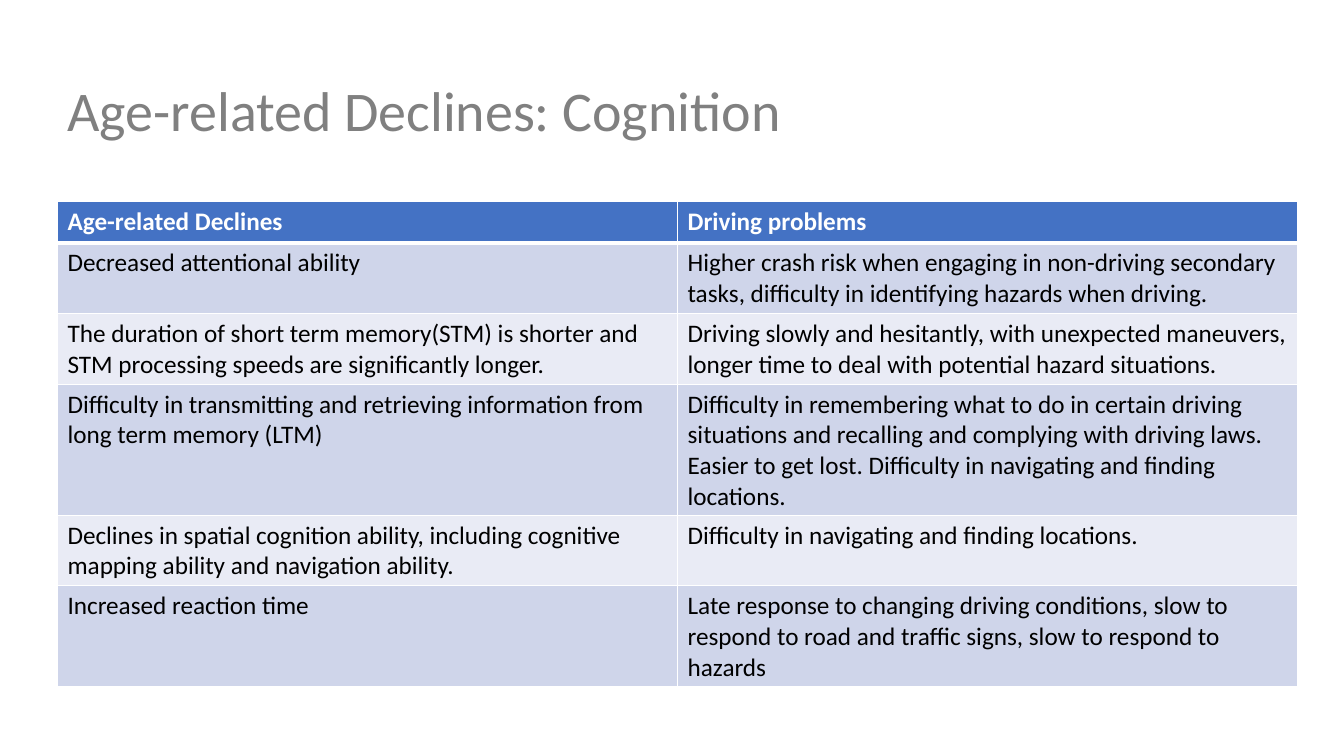
from lxml.etree import SubElement as Sub
from pptx import Presentation
from pptx.dml.color import RGBColor as Rgb
from pptx.enum.text import MSO_ANCHOR as Anchor
from pptx.oxml.ns import qn
from pptx.util import Inches, Pt

COLORS = {
    "title": "808080",
    "head": "4472C4",
    "odd": "CFD5EA",
    "even": "E9EBF5",
    "white": "FFFFFF",
    "black": "000000",
}

ROWS = [
    ("Age-related Declines", "Driving problems"),
    ("Decreased attentional ability",
     "Higher crash risk when engaging in non-driving secondary tasks, "
     "difficulty in identifying hazards when driving."),
    ("The duration of short term memory(STM) is shorter and "
     "STM processing speeds are significantly longer.",
     "Driving slowly and hesitantly, with unexpected maneuvers, "
     "longer time to deal with potential hazard situations."),
    ("Difficulty in transmitting and retrieving information from "
     "long term memory (LTM)",
     "Difficulty in remembering what to do in certain driving situations "
     "and recalling and complying with driving laws. Easier to get lost. "
     "Difficulty in navigating and finding locations."),
    ("Declines in spatial cognition ability, including cognitive "
     "mapping ability and navigation ability.",
     "Difficulty in navigating and finding locations."),
    ("Increased reaction time",
     "Late response to changing driving conditions, slow to respond to road "
     "and traffic signs, slow to respond to hazards"),
]


class Deck:
    font = "Calibri"

    def __init__(self):
        self.prs = Presentation()
        self.prs.slide_width = Inches(13.33)
        self.prs.slide_height = Inches(7.5)
        self.slide = self.prs.slides.add_slide(self.prs.slide_layouts[6])

    def run(self, para, text, size, color, bold=False):
        run = para.add_run()
        run.text = text
        font = run.font
        font.name, font.size, font.bold = self.font, Pt(size), bold
        font.color.rgb = Rgb.from_string(COLORS[color])

    def title(self, text, left, top, width, height):
        box = self.slide.shapes.add_textbox(
            Inches(left), Inches(top), Inches(width), Inches(height))
        frame = box.text_frame
        frame.word_wrap = True
        frame.vertical_anchor = Anchor.MIDDLE
        para = frame.paragraphs[0]
        para.line_spacing = 0.9
        self.run(para, text, 40, "title")

    def edge(self, cell, side, width):
        line = Sub(cell._tc.get_or_add_tcPr(), qn(f"a:ln{side}"), w=str(Pt(width)))
        fill = Sub(line, qn("a:solidFill"))
        Sub(fill, qn("a:srgbClr"), val=COLORS["white"])

    def cell(self, cell, text, row):
        head = row == 0
        for side in "LRTB":
            thick = (head and side == "B") or (row == 1 and side == "T")
            self.edge(cell, side, 3 if thick else 1)
        shade = "head" if head else "odd" if row % 2 else "even"
        cell.fill.solid()
        cell.fill.fore_color.rgb = Rgb.from_string(COLORS[shade])
        self.run(cell.text_frame.paragraphs[0], text, 18,
                 "white" if head else "black", head)

    def table(self, rows, left, top, width, height, step):
        """Give each row the least height step; its text may stretch it."""
        frame = self.slide.shapes.add_table(
            len(rows), len(rows[0]), Inches(left), Inches(top),
            Inches(width), Inches(step * len(rows)))
        frame.height = Inches(height)
        for r, texts in enumerate(rows):
            for c, text in enumerate(texts):
                self.cell(frame.table.cell(r, c), text, r)


def main():
    deck = Deck()
    deck.title("Age-related Declines: Cognition", 0.57, 0.4, 12.3, 1.45)
    deck.table(ROWS, 0.57, 2, 12.3, 5.11, 0.41)
    deck.prs.save("out.pptx")


if __name__ == "__main__":
    main()
